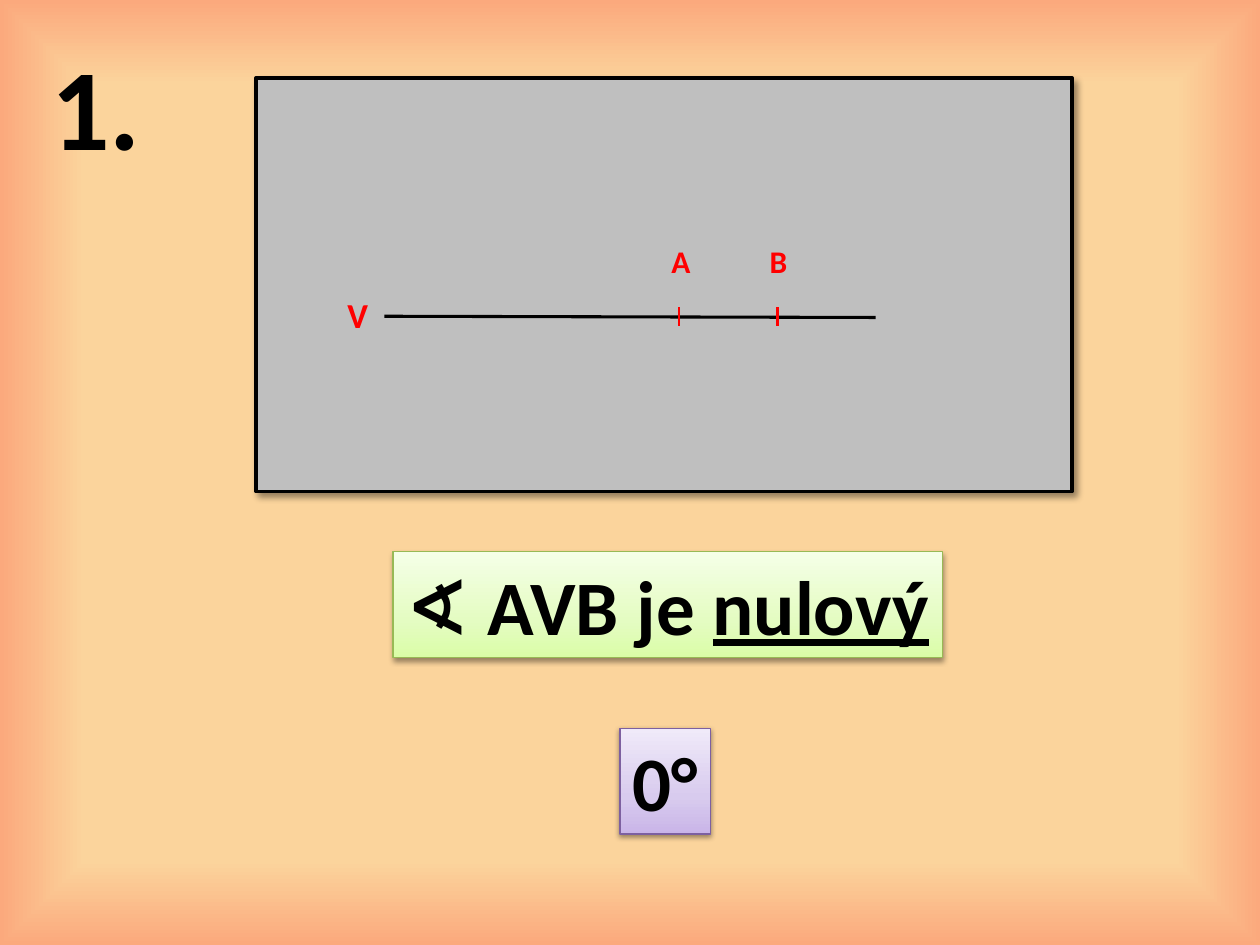
from pptx import Presentation
from pptx.dml.color import RGBColor
from pptx.enum.shapes import MSO_CONNECTOR, MSO_SHAPE
from pptx.enum.text import MSO_AUTO_SIZE
from pptx.oxml import parse_xml
from pptx.oxml.ns import nsdecls, qn
from pptx.util import Inches, Pt
from lxml import etree

LINE = MSO_CONNECTOR.STRAIGHT
RECT = MSO_SHAPE.RECTANGLE
GROW = MSO_AUTO_SIZE.SHAPE_TO_FIT_TEXT
BLACK = RGBColor(0x00, 0x00, 0x00)
RED = RGBColor(0xFF, 0x00, 0x00)
GREY = RGBColor(0xBF, 0xBF, 0xBF)
PEACH = RGBColor(0xFB, 0xD4, 0x9C)
CORAL = RGBColor(0xFB, 0xA9, 0x7D)
GREEN = RGBColor(0x98, 0xB9, 0x55)
LIMES = (RGBColor(0xDA, 0xFD, 0xA7), RGBColor(0xE4, 0xFC, 0xC2), RGBColor(0xF5, 0xFF, 0xE7))
PURPLE = RGBColor(0x7D, 0x60, 0xA0)
LILACS = (RGBColor(0xC9, 0xB5, 0xE8), RGBColor(0xD8, 0xCB, 0xEE), RGBColor(0xF0, 0xEA, 0xF9))
FONT = "Calibri"
SIGN_FONT = "Noto Sans CJK JP"
UPWARD = '<a:lin ang="16200000" scaled="0"/>'
INWARD = '<a:path path="rect"><a:fillToRect l="50000" t="50000" r="50000" b="50000"/></a:path>'


def blend(fill, props, stops, course):
    """Give the fill a gradient of (percent, colour) stops."""
    fill.solid()
    marks = "".join(
        f'<a:gs pos="{spot * 1000}"><a:srgbClr val="{tint}"/></a:gs>' for spot, tint in stops
    )
    grad = parse_xml(
        f'<a:gradFill {nsdecls("a")} rotWithShape="1"><a:gsLst>{marks}</a:gsLst>{course}</a:gradFill>'
    )
    props.replace(props.find(qn("a:solidFill")), grad)


def shade(shape, alpha, blur, dist, angle):
    """Add an outer black shadow, measured in points and degrees."""
    shape.shadow.inherit = False
    shape.element.spPr.find(qn("a:effectLst")).append(parse_xml(
        f'<a:outerShdw {nsdecls("a")} blurRad="{Pt(blur)}" dist="{Pt(dist)}" dir="{angle * 60000}" '
        f'algn="t" rotWithShape="0"><a:srgbClr val="{BLACK}"><a:alpha val="{alpha * 1000}"/>'
        "</a:srgbClr></a:outerShdw>"
    ))


def label(slide, box, parts, size, tint=BLACK):
    """Place bold text made of one or more runs."""
    shape = slide.shapes.add_textbox(*map(Inches, box))
    frame = shape.text_frame
    frame.word_wrap = False
    frame.auto_size = GROW
    for part in parts:
        run = frame.paragraphs[0].add_run()
        run.text = part
        run.font.size = Pt(size)
        run.font.bold = True
        run.font.name = FONT
        run.font.color.rgb = tint
    return shape


def stroke(slide, start, end, tint, width):
    """Draw a straight line without a shadow."""
    line = slide.shapes.add_connector(LINE, *map(Inches, (*start, *end)))
    line.line.color.rgb = tint
    line.line.width = Pt(width)
    etree.SubElement(line.element.spPr, qn("a:effectLst"))


def figure(slide, box):
    """Draw the grey panel with the ray from V through A and B."""
    left, top, width, height = box
    panel = slide.shapes.add_shape(RECT, *map(Inches, box))
    panel.fill.solid()
    panel.fill.fore_color.rgb = GREY
    panel.line.color.rgb = BLACK
    panel.line.width = Pt(2)
    shade(panel, 40, 4, 3, 45)
    ray = top + 1.9
    stroke(slide, (left + 4.92, ray), (left + 1.02, ray - 0.01), BLACK, 1.75)
    label(slide, (left + 0.63, ray - 0.24, 0.37, 0.44), ["V"], 20, RED)
    for name, shift in (("A", 3.36), ("B", 4.14)):
        mark = left + shift
        label(slide, (mark - 0.16, ray - 0.65, 0.35, 0.4), [name], 18, RED)
        stroke(slide, (mark, ray - 0.08), (mark, ray + 0.07), RED, 1.5)


def plate(slide, box, parts, tints, edge):
    """Place a text plate with a gradient fill and return its runs."""
    shape = label(slide, box, parts, 44)
    blend(shape.fill, shape.element.spPr, zip((0, 35, 100), tints), UPWARD)
    shape.line.color.rgb = edge
    shape.line.width = Pt(0.75)
    shade(shape, 38, 3.1, 1.6, 90)
    return shape.text_frame.paragraphs[0].runs


def answer(slide, box):
    """Write the name of the angle with its sign and underlined kind."""
    sign, _, kind = plate(slide, box, ["∢ ", "AVB je ", "nulový"], LIMES, GREEN)
    sign.font.name = SIGN_FONT
    latin = sign.font._element.find(qn("a:latin"))
    latin.addnext(parse_xml(f'<a:ea {nsdecls("a")} typeface="{SIGN_FONT}"/>'))
    kind.font.underline = True


def main():
    """Build the slide and save it."""
    deck = Presentation()
    deck.slide_width, deck.slide_height = Inches(10), Inches(7.5)
    slide = deck.slides.add_slide(deck.slide_layouts[6])
    fill = slide.background.fill
    fill.solid()
    props = slide.element.find(".//" + qn("p:bgPr"))
    blend(fill, props, ((0, PEACH), (82, PEACH), (100, CORAL)), INWARD)
    figure(slide, (2.03, 0.62, 6.48, 3.28))
    answer(slide, (3.12, 4.38, 4.36, 0.84))
    plate(slide, (4.92, 5.78, 0.72, 0.84), ["0°"], LILACS, PURPLE)
    label(slide, (0.31, 0.23, 0.92, 1.21), ["1."], 66)
    deck.save("out.pptx")


if __name__ == "__main__":
    main()
